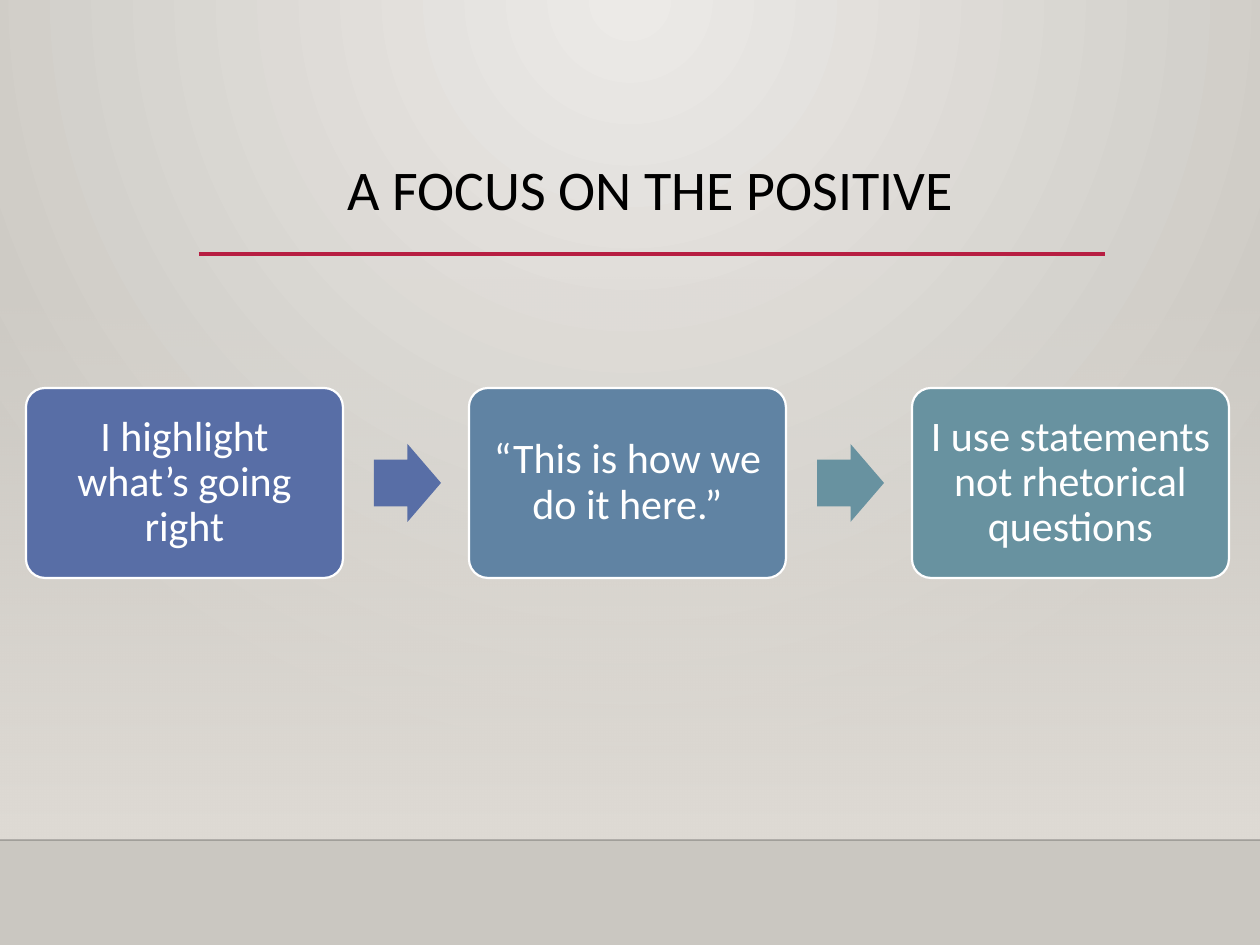
from dataclasses import dataclass

from lxml.etree import SubElement
from pptx import Presentation
from pptx.dml.color import RGBColor
from pptx.enum.shapes import MSO_CONNECTOR, MSO_SHAPE
from pptx.enum.text import MSO_ANCHOR, PP_ALIGN
from pptx.oxml import parse_xml
from pptx.oxml.ns import nsdecls, qn
from pptx.util import Emu, Pt

EMU_PER_PX = 914400 / 126
FONT = "Calibri"
COLORS = {
    "glow": "ECEAE7",
    "wall": "CAC7C1",
    "haze": "DFDBD5",
    "edge": "000001",
    "rule": "B71E42",
    "title": "000000",
    "white": "FFFFFF",
    "indigo": "586EA6",
    "blue": "6083A3",
    "teal": "6892A0",
}
STEP_LEFT, STEP_TOP, STEP_WIDTH, STEP_HEIGHT = 26, 388, 317, 190
STEP_PITCH = 443
ARROW_LEFT, ARROW_TOP, ARROW_WIDTH, ARROW_HEIGHT = 374, 444, 67, 78


@dataclass(frozen=True)
class Step:
    text: str
    color: str


@dataclass(frozen=True)
class Rule:
    left: int
    right: int
    top: int
    color: str
    weight: float
    opacity: int = 100


STEPS = [
    Step("I highlight what’s going right", "indigo"),
    Step("“This is how we do it here.”", "blue"),
    Step("I use statements not rhetorical questions", "teal"),
]
ARROW_COLORS = ["indigo", "teal"]
RULES = [
    Rule(0, 1260, 840, "edge", 1, 20),
    Rule(199, 1105, 254, "rule", 2.5),
]


def px(length: int) -> Emu:
    return Emu(round(length * EMU_PER_PX))


def rgb(name: str) -> RGBColor:
    return RGBColor.from_string(COLORS[name])


def set_gradient(parent, start: str, end: str, start_opacity: int, direction: str) -> None:
    gradient = parse_xml(
        f'<a:gradFill {nsdecls("a")} rotWithShape="1"><a:gsLst>'
        f'<a:gs pos="0"><a:srgbClr val="{COLORS[start]}">'
        f'<a:alpha val="{start_opacity * 1000}"/></a:srgbClr></a:gs>'
        f'<a:gs pos="100000"><a:srgbClr val="{COLORS[end]}"/></a:gs>'
        f"</a:gsLst>{direction}</a:gradFill>"
    )
    parent.replace(parent.find(qn("a:solidFill")), gradient)


def format_text(frame, size: int, color: str) -> None:
    frame.word_wrap = True
    para = frame.paragraphs[0]
    para.alignment = PP_ALIGN.CENTER
    para.line_spacing = 0.9
    for span in para.runs:
        span.font.name = FONT
        span.font.size = Pt(size)
        span.font.color.rgb = rgb(color)


def add_block(page, kind: MSO_SHAPE, left: int, top: int, width: int, height: int, color: str):
    block = page.shapes.add_shape(kind, px(left), px(top), px(width), px(height))
    block.shadow.inherit = False
    block.fill.solid()
    block.fill.fore_color.rgb = rgb(color)
    block.line.fill.background()
    return block


def add_backdrop(page) -> None:
    page.background.fill.solid()
    set_gradient(
        page.element.find(".//" + qn("p:bgPr")), "glow", "wall", 100,
        '<a:path path="circle"><a:fillToRect l="43000" t="0" r="43000" b="100000"/></a:path>',
    )
    haze = add_block(page, MSO_SHAPE.RECTANGLE, 0, 277, 1260, 563, "haze")
    set_gradient(haze.element.spPr, "haze", "haze", 0, '<a:lin ang="5400000" scaled="0"/>')


def add_rule(page, rule: Rule) -> None:
    line = page.shapes.add_connector(
        MSO_CONNECTOR.STRAIGHT, px(rule.left), px(rule.top), px(rule.right), px(rule.top)
    )
    line.line.width = Pt(rule.weight)
    line.line.color.rgb = rgb(rule.color)
    properties = line.element.spPr
    SubElement(properties, qn("a:effectLst"))
    if rule.opacity < 100:
        color = properties.find(".//" + qn("a:srgbClr"))
        SubElement(color, qn("a:alpha")).set("val", str(rule.opacity * 1000))


def add_title(page, text: str) -> None:
    title = page.shapes.title
    title.left, title.top, title.width, title.height = px(115), px(156), px(1071), px(158)
    frame = title.text_frame
    frame.text = text
    frame.vertical_anchor = MSO_ANCHOR.TOP
    format_text(frame, 32, "title")


def add_step(page, index: int, step: Step) -> None:
    left = STEP_LEFT + index * STEP_PITCH
    box = add_block(
        page, MSO_SHAPE.ROUNDED_RECTANGLE, left, STEP_TOP, STEP_WIDTH, STEP_HEIGHT, step.color
    )
    box.adjustments[0] = 0.1
    box.line.color.rgb = rgb("white")
    box.line.width = Pt(1.25)
    frame = box.text_frame
    frame.text = step.text
    frame.vertical_anchor = MSO_ANCHOR.MIDDLE
    frame.margin_left = frame.margin_right = px(12)
    frame.margin_top = frame.margin_bottom = px(12)
    format_text(frame, 24, "white")


def add_arrow(page, index: int, color: str) -> None:
    left = ARROW_LEFT + index * STEP_PITCH
    arrow = add_block(
        page, MSO_SHAPE.RIGHT_ARROW, left, ARROW_TOP, ARROW_WIDTH, ARROW_HEIGHT, color
    )
    arrow.adjustments[0] = 0.6
    arrow.adjustments[1] = 0.5


def main() -> None:
    deck = Presentation()
    deck.slide_width, deck.slide_height = px(1260), px(945)
    page = deck.slides.add_slide(deck.slide_layouts[5])
    add_backdrop(page)
    for rule in RULES:
        add_rule(page, rule)
    add_title(page, "A FOCUS ON THE POSITIVE")
    for index, step in enumerate(STEPS):
        add_step(page, index, step)
    for index, color in enumerate(ARROW_COLORS):
        add_arrow(page, index, color)
    deck.save("out.pptx")


if __name__ == "__main__":
    main()
